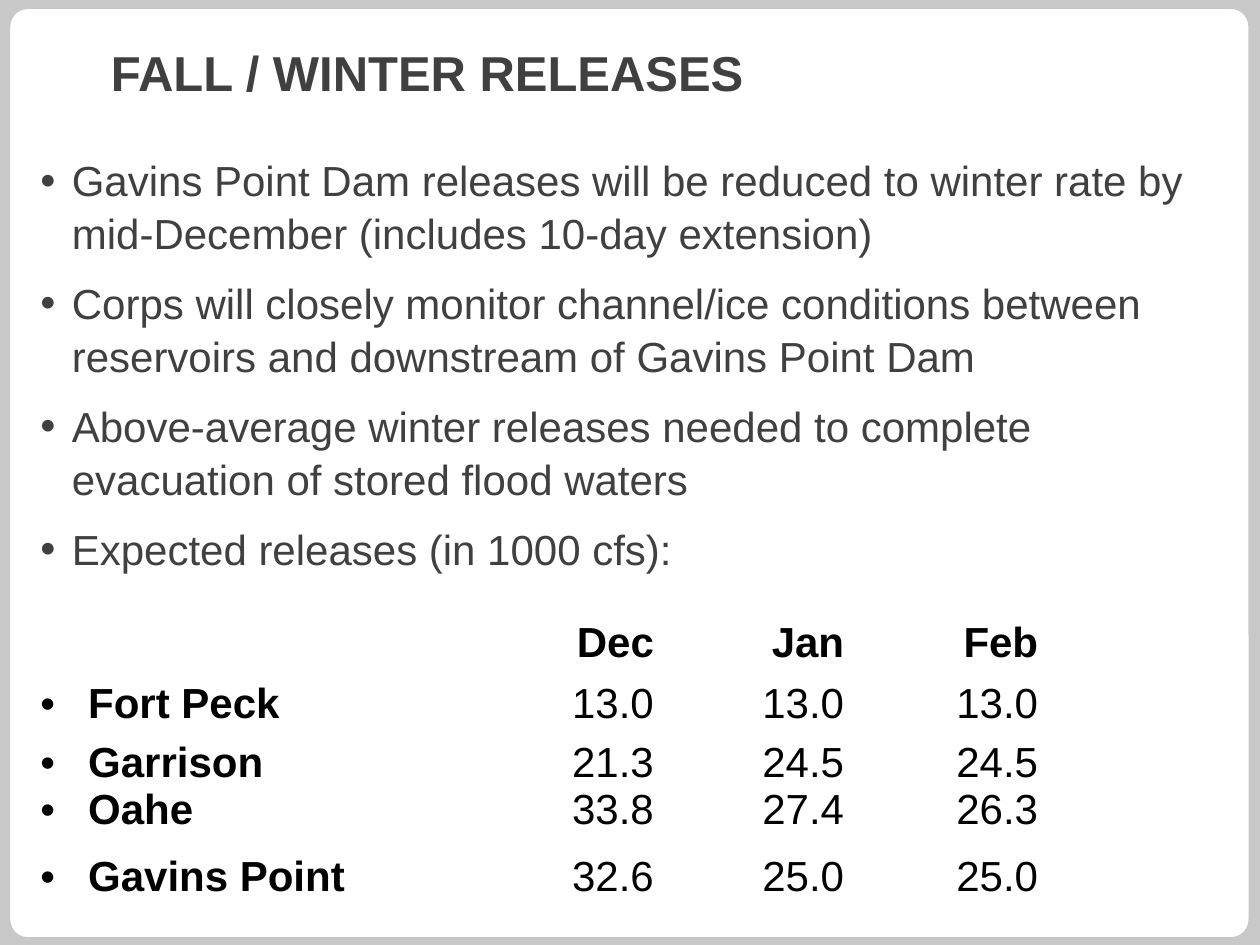
from lxml.etree import SubElement
from pptx import Presentation
from pptx.dml.color import RGBColor
from pptx.enum.shapes import MSO_SHAPE as Shape
from pptx.enum.text import MSO_ANCHOR as Anchor, MSO_AUTO_SIZE as AutoSize, PP_ALIGN as Align
from pptx.oxml.ns import qn
from pptx.util import Inches, Pt

GREY, DARK, BLACK, WHITE = "C8C8C8", "404040", "000000", "FFFFFF"

BULLETS = [
    "Gavins Point Dam releases will be reduced to winter rate by "
    "mid-December (includes 10-day extension)",
    "Corps will closely monitor channel/ice conditions between "
    "reservoirs and downstream of Gavins Point Dam",
    "Above-average winter releases needed to complete evacuation of stored flood waters",
    "Expected releases (in 1000 cfs):",
]
MONTHS = ["Dec", "Jan", "Feb"]
# Each table row holds one or more dams with their monthly releases.
RELEASES = [
    [("Fort Peck", "13.0", "13.0", "13.0")],
    [("Garrison", "21.3", "24.5", "24.5"), ("Oahe", "33.8", "27.4", "26.3")],
    [("Gavins Point", "32.6", "25.0", "25.0")],
]
COLUMN_WIDTHS = [2.82, 0.97, 1.28, 1.51, 1.54, 1.45]
ROW_HEIGHTS = [0.48, 0.46, 0.9, 0.48]
NAME_COLUMN, SPACER_COLUMN, FIRST_MONTH_COLUMN = 0, 1, 2


def color(value):
    return RGBColor.from_string(value)


def place(shape, left, top, width, height):
    box = {"left": left, "top": top, "width": width, "height": height}
    for name, value in box.items():
        setattr(shape, name, Inches(value))


def add_bullet(para, indent, size=100):
    properties = para._p.get_or_add_pPr()
    properties.set("marL", str(Inches(indent)))
    properties.set("indent", str(-Inches(indent)))
    SubElement(properties, qn("a:buSzPct"), val=str(size * 1000))
    SubElement(properties, qn("a:buFont"), typeface="Arial")
    SubElement(properties, qn("a:buChar"), char="•")


def write(para, text, font_color, size=24, bold=False, **layout):
    """Add a run of text and set paragraph attributes from layout."""
    for name, value in layout.items():
        setattr(para, name, value)
    span = para.add_run()
    span.text = text
    font = {"name": "Arial", "size": Pt(size), "bold": bold}
    for name, value in font.items():
        setattr(span.font, name, value)
    span.font.color.rgb = color(font_color)


def paragraphs(frame, count):
    return [frame.paragraphs[0]] + [frame.add_paragraph() for _ in range(count - 1)]


def add_panel(slide):
    panel = slide.shapes.add_shape(
        Shape.ROUNDED_RECTANGLE, Inches(0.05), Inches(0.04), Inches(9.89), Inches(7.43))
    panel.adjustments[0] = 0.023
    panel.shadow.inherit = False
    panel.fill.solid()
    panel.fill.fore_color.rgb = color(WHITE)
    panel.line.color.rgb = color(GREY)
    panel.line.width = Pt(4.5)
    slide.shapes._spTree.insert(2, panel._element)  # behind the placeholders


def fill_title(title):
    place(title, 0.78, 0.14, 8.35, 0.86)
    frame = title.text_frame
    frame.auto_size = AutoSize.NONE
    frame.vertical_anchor = Anchor.MIDDLE
    write(frame.paragraphs[0], "FALL / WINTER RELEASES", DARK, 28, True, alignment=Align.LEFT)


def fill_body(body):
    place(body, 0.22, 1.16, 9.56, 6.08)
    frame = body.text_frame
    frame.auto_size = AutoSize.NONE
    for index, (para, text) in enumerate(zip(paragraphs(frame, len(BULLETS)), BULLETS)):
        add_bullet(para, 0.25, 103)
        write(para, text, DARK, line_spacing=1.05,
              space_before=Pt(3 if index else 0), space_after=Pt(6.8))


def fill_cell(cell, lines, bold=False, bulleted=False):
    for para, text in zip(paragraphs(cell.text_frame, len(lines)), lines):
        if bulleted:
            add_bullet(para, 0.38)
        write(para, text, BLACK, bold=bold, alignment=Align.LEFT if bulleted else Align.RIGHT)


def add_release_table(slide):
    frame = slide.shapes.add_table(
        len(ROW_HEIGHTS), len(COLUMN_WIDTHS), Inches(0.22), Inches(4.87),
        Inches(sum(COLUMN_WIDTHS)), Inches(sum(ROW_HEIGHTS)))
    table = frame.table
    table.first_row = table.horz_banding = False
    for column, width in zip(table.columns, COLUMN_WIDTHS):
        column.width = Inches(width)
    for row, height in zip(table.rows, ROW_HEIGHTS):
        row.height = Inches(height)
    for cell in table.iter_cells():
        cell.fill.background()
    last_row = len(ROW_HEIGHTS) - 1
    table.cell(0, SPACER_COLUMN).merge(table.cell(last_row, SPACER_COLUMN))

    for column, month in enumerate(MONTHS, FIRST_MONTH_COLUMN):
        fill_cell(table.cell(0, column), [month], bold=True)
    for row, dams in enumerate(RELEASES, 1):
        names, *months = zip(*dams)
        fill_cell(table.cell(row, NAME_COLUMN), names, bold=True, bulleted=True)
        for column, values in enumerate(months, FIRST_MONTH_COLUMN):
            fill_cell(table.cell(row, column), values)


def main():
    deck = Presentation()
    deck.slide_width, deck.slide_height = Inches(10), Inches(7.5)
    slide = deck.slides.add_slide(deck.slide_layouts[1])
    slide.background.fill.solid()
    slide.background.fill.fore_color.rgb = color(GREY)
    add_panel(slide)
    fill_title(slide.shapes.title)
    fill_body(slide.placeholders[1])
    add_release_table(slide)
    deck.save("out.pptx")


if __name__ == "__main__":
    main()
